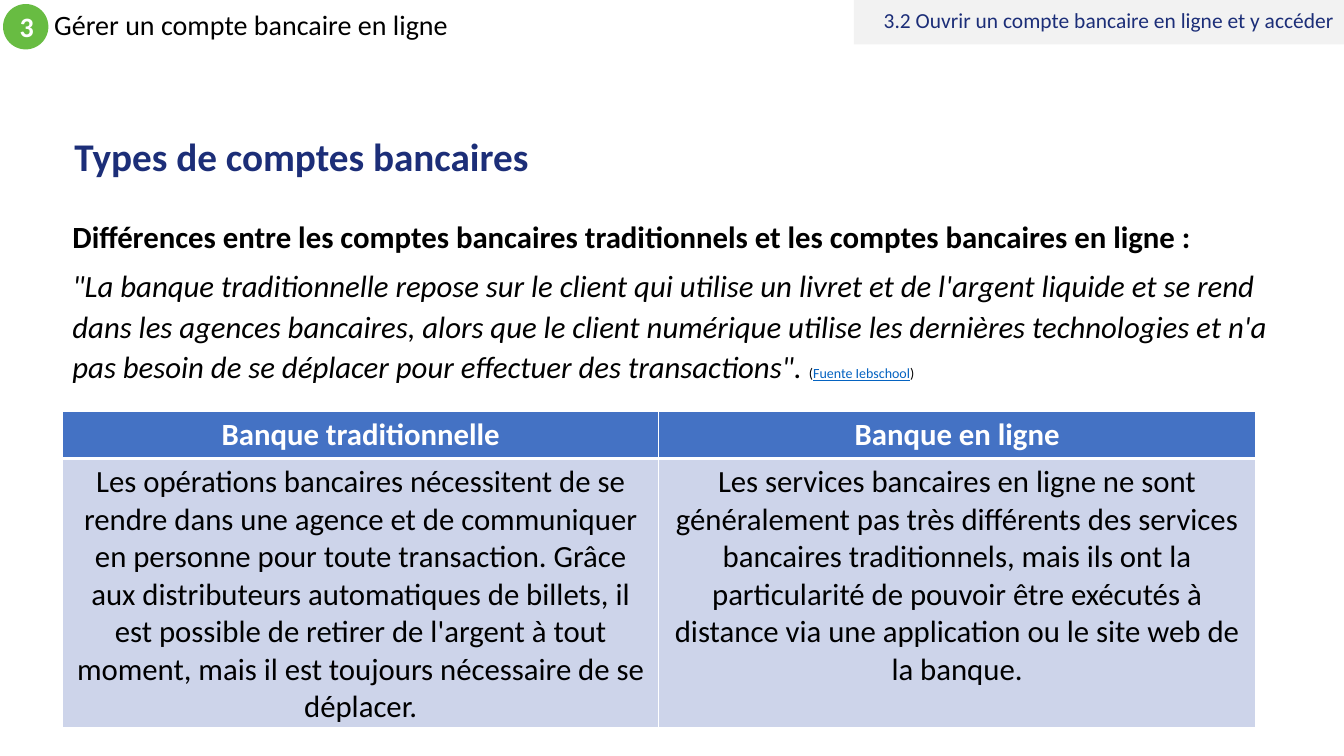
from lxml.etree import SubElement
from pptx import Presentation
from pptx.dml.color import RGBColor
from pptx.enum.shapes import MSO_SHAPE
from pptx.enum.text import MSO_ANCHOR, PP_ALIGN
from pptx.oxml.ns import qn
from pptx.util import Inches, Pt

COLORS = {
    "navy": "1C2E78", "green": "68BC42", "grey": "F2F2F2", "link": "0563C1",
    "header": "4472C4", "body": "CDD4EA", "black": "000000", "white": "FFFFFF",
}
W, H = 13.33, 7.5
HEADINGS = ["Banque traditionnelle", "Banque en ligne"]
DESCRIPTIONS = [
    "Les opérations bancaires nécessitent de se rendre dans une agence et de "
    "communiquer en personne pour toute transaction. Grâce aux distributeurs "
    "automatiques de billets, il est possible de retirer de l'argent à tout "
    "moment, mais il est toujours nécessaire de se déplacer.",
    "Les services bancaires en ligne ne sont généralement pas très différents "
    "des services bancaires traditionnels, mais ils ont la particularité de "
    "pouvoir être exécutés à distance via une application ou le site web de la "
    "banque.",
]
QUOTE = (
    "\"La banque traditionnelle repose sur le client qui utilise un livret et de "
    "l'argent liquide et se rend dans les agences bancaires, alors que le client "
    "numérique utilise les dernières technologies et n'a pas besoin de se "
    "déplacer pour effectuer des transactions\". "
)


def rgb(name):
    """Return the named palette colour."""
    return RGBColor.from_string(COLORS[name])


def style(font, size, color="black", bold=False, italic=False, underline=False):
    """Set every property of a font."""
    font.name, font.size, font.bold = "Calibri", Pt(size), bold
    font.italic, font.underline = italic, underline
    font.color.rgb = rgb(color)


def write(p, text, size, color="black", bold=False, align=PP_ALIGN.LEFT, spacing=1.0):
    """Fill a paragraph with text in one style."""
    p.text, p.alignment, p.line_spacing = text, align, spacing
    style(p.font, size, color, bold)


def add_text(s, box, anchor=MSO_ANCHOR.MIDDLE):
    """Add a wrapping text box and return its text frame."""
    tf = s.shapes.add_textbox(*map(Inches, box)).text_frame
    tf.word_wrap, tf.vertical_anchor = True, anchor
    return tf


def add_panel(s, kind, box, fill):
    """Add a flat filled shape and return its text frame."""
    sp = s.shapes.add_shape(kind, *map(Inches, box))
    sp.shadow.inherit = False
    sp.fill.solid()
    sp.fill.fore_color.rgb = rgb(fill)
    sp.line.fill.background()
    tf = sp.text_frame
    tf.word_wrap, tf.vertical_anchor = True, MSO_ANCHOR.MIDDLE
    return tf


def add_chapter(s, x, y, w, h):
    """Place the chapter number in a disc with its name beside it."""
    tf = add_text(s, (x + 0.91 * h, y, w - h, h))
    write(tf.paragraphs[0], "Gérer un compte bancaire en ligne", 20, spacing=0.9)
    tf = add_panel(s, MSO_SHAPE.OVAL, (x, y, h, h), "green")
    write(tf.paragraphs[0], "3", 20, "white", True, PP_ALIGN.CENTER)


def add_section(s, x, y, w, h):
    """Place the section label on its grey band."""
    tf = add_panel(s, MSO_SHAPE.RECTANGLE, (x, y, w, h), "grey")
    write(tf.paragraphs[0], "3.2 Ouvrir un compte bancaire en ligne et y accéder",
          15.3, "navy", align=PP_ALIGN.RIGHT, spacing=0.8)


def add_title(s, x, y, w, h):
    """Place the slide title."""
    tf = add_text(s, (x, y, w, h))
    write(tf.paragraphs[0], "Types de comptes bancaires", 28, "navy", True, spacing=0.9)


def add_intro(s, x, y, w, h):
    """Place the lead sentence and the quotation with its source."""
    tf = add_text(s, (x, y, w, h), MSO_ANCHOR.TOP)
    write(tf.paragraphs[0], "Différences entre les comptes bancaires traditionnels "
          "et les comptes bancaires en ligne :", 22, bold=True)
    p = tf.add_paragraph()
    p.line_spacing, p.space_before = 1.1, Pt(6)
    for text, size, color, italic, underline in [
        (QUOTE, 22, "black", True, False),
        ("(", 10, "black", False, False),
        ("Fuente Iebschool", 10, "link", False, True),
        (")", 10, "black", False, False),
    ]:
        r = p.add_run()
        r.text = text
        style(r.font, size, color, italic=italic, underline=underline)


def add_borders(cell, widths):
    """Draw white borders with the given point widths by side."""
    tcPr = cell._tc.get_or_add_tcPr()
    for side, width in widths.items():
        ln = SubElement(tcPr, qn(f"a:ln{side}"), w=str(Pt(width)))
        fill = SubElement(ln, qn("a:solidFill"))
        SubElement(fill, qn("a:srgbClr"), val=COLORS["white"])


def add_comparison(s, x, y, w, h):
    """Place the table comparing both kinds of bank."""
    table = s.shapes.add_table(2, 2, *map(Inches, (x, y, w, h))).table
    header_h = 0.15 * h
    table.rows[0].height = Inches(header_h)
    table.rows[1].height = Inches(h - header_h)
    rows = [
        (HEADINGS, "header", "white", True, {"L": 1, "R": 1, "T": 1, "B": 3}),
        (DESCRIPTIONS, "body", "black", False, {"L": 1, "R": 1, "T": 3, "B": 1}),
    ]
    for i, (texts, fill, color, bold, widths) in enumerate(rows):
        for j, text in enumerate(texts):
            cell = table.cell(i, j)
            add_borders(cell, widths)
            cell.fill.solid()
            cell.fill.fore_color.rgb = rgb(fill)
            write(cell.text_frame.paragraphs[0], text, 22, color, bold, PP_ALIGN.CENTER)


def main():
    """Build the slide and save it."""
    prs = Presentation()
    prs.slide_width, prs.slide_height = Inches(W), Inches(H)
    s = prs.slides.add_slide(prs.slide_layouts[6])
    left, width = 0.62, 12.1
    add_chapter(s, 0.03, 0.04, 8.45, 0.45)
    add_title(s, left + 0.02, 1.18, width, 0.8)
    add_intro(s, left, 2.11, width, 1.9)
    add_comparison(s, left, 4.08, 11.83, 3.13)
    add_section(s, W - 4.86, 0, 4.86, 0.44)
    prs.save("out.pptx")


if __name__ == "__main__":
    main()
